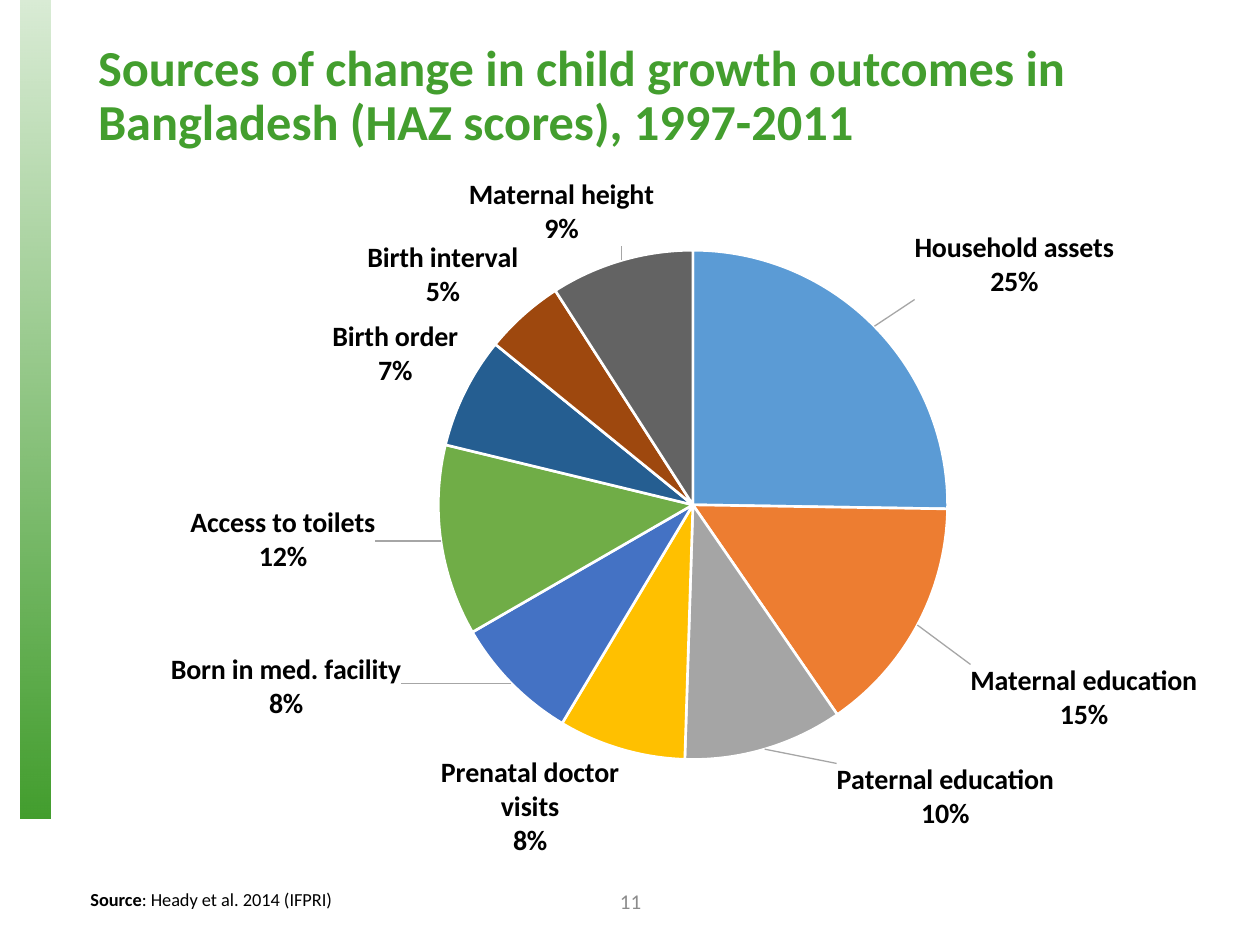
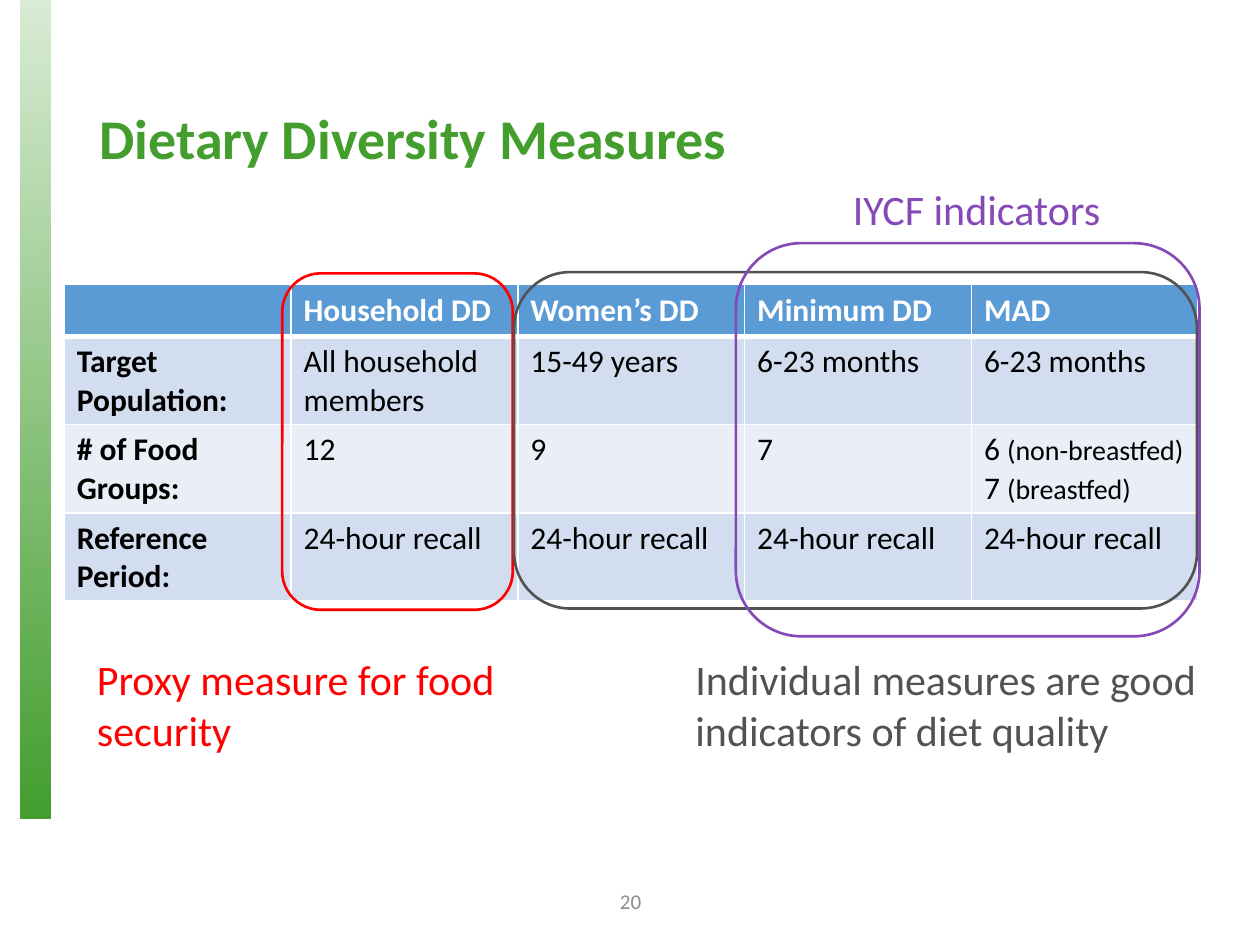
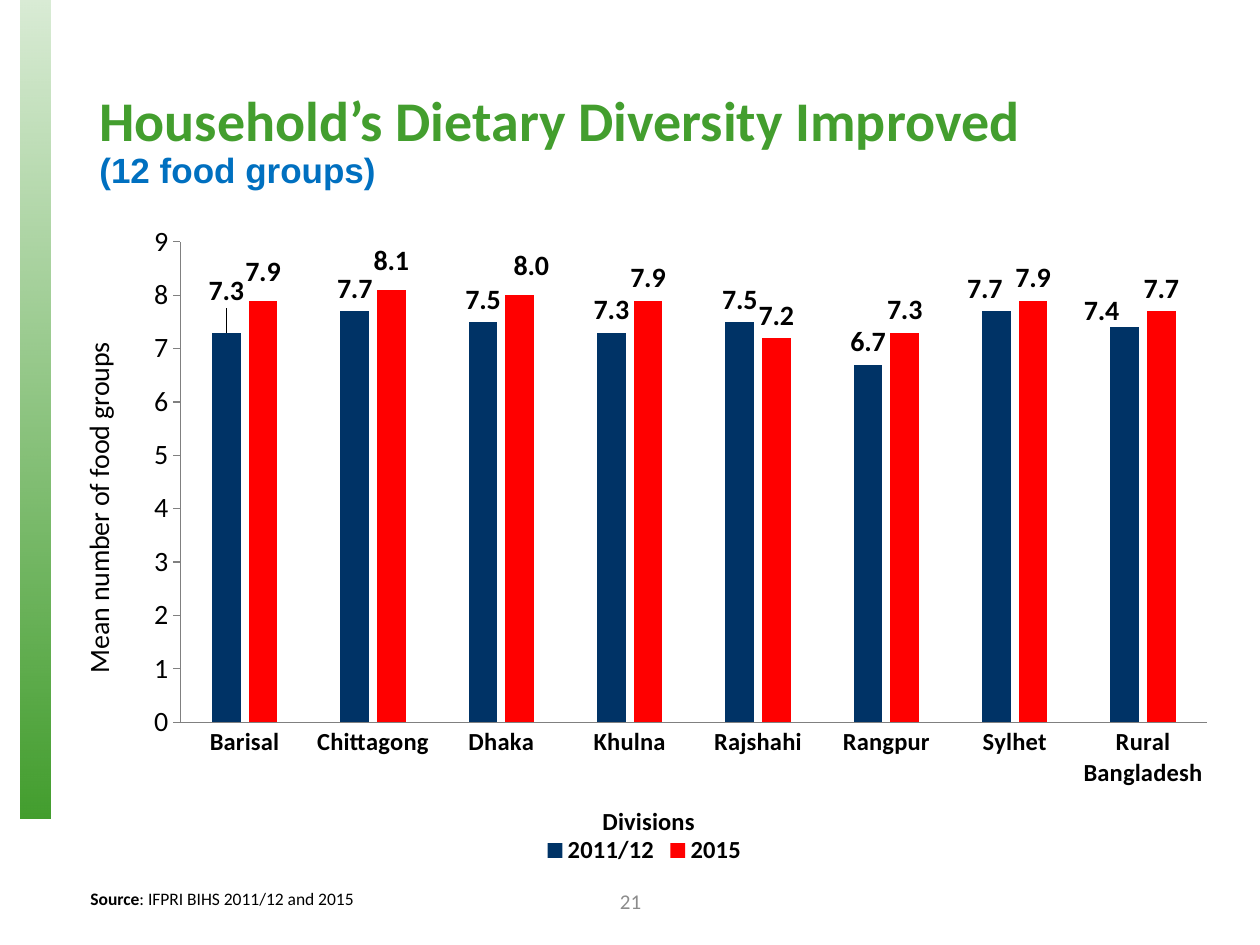
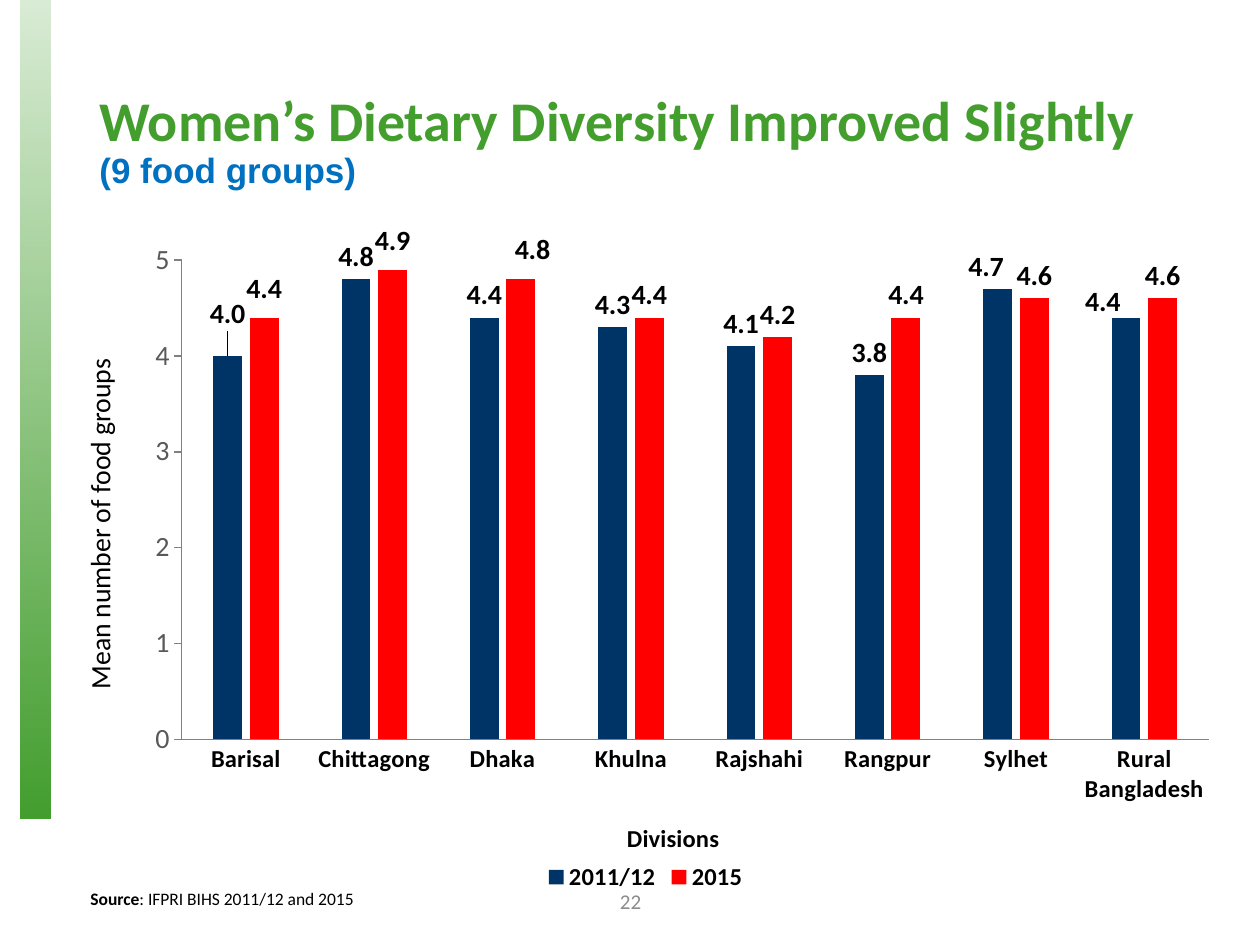
from copy import deepcopy

from lxml import etree
from pptx import Presentation
from pptx import util as u
from pptx.chart.data import CategoryChartData
from pptx.dml.color import RGBColor
from pptx.enum import chart as ch, shapes, text
from pptx.oxml import parse_xml
from pptx.oxml.ns import nsdecls, qn

PX = 9144  # 100 px to the inch

GREEN = RGBColor(0x43, 0x9E, 0x2E)
BLUE = RGBColor(0x00, 0x70, 0xC0)
BLACK = RGBColor(0, 0, 0)
WHITE = RGBColor(0xFF, 0xFF, 0xFF)
RED = RGBColor(0xFF, 0, 0)
NAVY = RGBColor(0x00, 0x33, 0x66)
PURPLE = RGBColor(0x85, 0x49, 0xB7)
CHARCOAL = RGBColor(0x52, 0x52, 0x52)
AXIS_GRAY = RGBColor(0x80, 0x80, 0x80)
TICK_GRAY = RGBColor(0x59, 0x59, 0x59)
NUMBER_GRAY = RGBColor(0x8C, 0x8C, 0x8C)
HEADER_BLUE = RGBColor(0x5B, 0x9B, 0xD5)
BAND_DARK = RGBColor(0xD2, 0xDE, 0xEF)
BAND_LIGHT = RGBColor(0xEA, 0xEF, 0xF7)
SLICES = [RGBColor.from_string(c) for c in (
    "5B9BD5", "ED7D31", "A5A5A5", "FFC000", "4472C4",
    "70AD47", "255E91", "9E480E", "636363")]

FONT = "Calibri"
TITLE_BOX = (69, 40, 862, 145)

GROWTH_SOURCES = {
    "Household assets": 25, "Maternal education": 15, "Paternal education": 10,
    "Prenatal doctor visits": 8, "Born in med. facility": 8,
    "Access to toilets": 12, "Birth order": 7, "Birth interval": 5,
    "Maternal height": 9}
GROWTH_LABEL_SHIFTS = {
    0: (0.03, -0.03), 1: (0.04, 0.05), 2: (0.06, 0.01),
    4: (-0.09, -0.05), 5: (-0.05, -0.05), 8: (0.03, -0.01)}

DIVISIONS = ["Barisal", "Chittagong", "Dhaka", "Khulna", "Rajshahi",
             "Rangpur", "Sylhet", "Rural Bangladesh"]
SURVEYS = [  # year, colour, label shifts
    ("2011/12", NAVY, {0: (0, -0.03), 6: (-0.01, 0), 7: (-0.02, 0.01)}),
    ("2015", RED, {0: (0, -0.01), 1: (0, -0.01), 2: (0.01, -0.01)})]

MEASURES = [
    ["", "Household DD", "Women’s DD", "Minimum DD", "MAD"],
    ["Target Population:", "All household members", "15-49 years",
     "6-23 months", "6-23 months"],
    ["# of Food Groups:", "12", "9", "7",
     [("6 ", "(non-breastfed)"), ("7 ", "(breastfed)")]],
    ["Reference Period:"] + ["24-hour recall"] * 4]


def emu(box):
    return [u.Emu(length * PX) for length in box]


def style_font(font, size, color=BLACK, bold=False, name=FONT):
    font.size, font.bold, font.name = u.Pt(size), bold, name
    font.color.rgb = color


def add_run(paragraph, words, size, color=BLACK, bold=False, name=FONT):
    run = paragraph.add_run()
    run.text = words
    style_font(run.font, size, color, bold, name)


def add_textbox(slide, box, anchor=text.MSO_ANCHOR.TOP):
    """Return the frame and first paragraph of a wrapping text box."""
    frame = slide.shapes.add_textbox(*emu(box)).text_frame
    frame.word_wrap = True
    frame.vertical_anchor = anchor
    return frame, frame.paragraphs[0]


def add_band(slide, box):
    band = slide.shapes.add_shape(shapes.MSO_SHAPE.RECTANGLE, *emu(box))
    band.shadow.inherit = False
    band.line.fill.background()
    band.fill.gradient()
    band.fill.gradient_angle = 270
    for stop in band.fill.gradient_stops:
        stop.color.rgb = GREEN
    top_color = next(band._element.iter(qn("a:srgbClr")))
    etree.SubElement(top_color, qn("a:alpha"), val="20000")


def add_base(prs, number):
    slide = prs.slides.add_slide(prs.slide_layouts[6])
    add_band(slide, (16, 0, 24, 650))
    _, paragraph = add_textbox(slide, (388, 695, 225, 40), text.MSO_ANCHOR.MIDDLE)
    paragraph.alignment = text.PP_ALIGN.CENTER
    add_run(paragraph, str(number), 12, NUMBER_GRAY)
    return slide


def add_title(slide, title, subtitle=None, box=TITLE_BOX, size=32):
    frame, paragraph = add_textbox(slide, box, text.MSO_ANCHOR.MIDDLE)
    paragraph.line_spacing = 0.9
    add_run(paragraph, title, size, GREEN, True)
    if subtitle:
        paragraph.add_line_break()
        add_run(paragraph, subtitle, 20, BLUE, True, "Arial")
    return frame


def add_source(slide, citation, size=10):
    _, paragraph = add_textbox(slide, (62, 700, 727, 28))
    add_run(paragraph, "Source", size, bold=True)
    add_run(paragraph, ": " + citation, size)


def make_layout(x, y, w=None, h=None):
    """Manual chart layout; with a size it fixes the inner plot area."""
    parts = [("x", x), ("y", y)]
    if w:
        parts = [("layoutTarget", "inner"), ("xMode", "edge"),
                 ("yMode", "edge")] + parts + [("w", w), ("h", h)]
    inner = "".join(f'<c:{tag} val="{value}"/>' for tag, value in parts)
    return parse_xml(f'<c:layout {nsdecls("c")}><c:manualLayout>{inner}'
                     '</c:manualLayout></c:layout>')


def set_layout(element, layout):
    current = element.find(qn("c:layout"))
    if current is None:
        element.insert(0, layout)
    else:
        element.replace(current, layout)


def place_axis_title(axis, words, size, bold, x, y):
    title = axis.axis_title
    paragraph = title.text_frame.paragraphs[0]
    add_run(paragraph, words, size, bold=bold)
    layout = make_layout(x, y)
    for mode in ("yMode", "xMode"):
        layout[0].insert(0, parse_xml(f'<c:{mode} {nsdecls("c")} val="edge"/>'))
    set_layout(title._element, layout)
    return title


def shift_labels(labels, shifts):
    """Move single labels by fractions of the chart, keeping the shared style."""
    group = labels._element
    shared = [part for part in group if part.tag not in
              (qn("c:dLbl"), qn("c:showLeaderLines"), qn("c:leaderLines"))]
    for position, (index, shift) in enumerate(shifts.items()):
        label = parse_xml(f'<c:dLbl {nsdecls("c")}><c:idx val="{index}"/></c:dLbl>')
        label.append(make_layout(*shift))
        label.extend(deepcopy(part) for part in shared)
        group.insert(position, label)


def add_chart(slide, kind, box, data):
    chart = slide.shapes.add_chart(kind, *emu(box), data).chart
    style_font(chart.font, 10)
    chart.has_title = False
    chart.has_legend = False
    return chart


def style_labels(series, number_format):
    labels = series.data_labels
    labels.number_format = number_format
    labels.number_format_is_linked = False
    style_font(labels.font, 16, bold=True)
    labels.position = ch.XL_LABEL_POSITION.OUTSIDE_END
    return labels


def add_growth_pie(slide, box):
    data = CategoryChartData()
    data.categories = list(GROWTH_SOURCES)
    data.add_series("Series 1", list(GROWTH_SOURCES.values()))
    chart = add_chart(slide, ch.XL_CHART_TYPE.PIE, box, data)
    chart.plots[0].vary_by_categories = True
    plot_area = chart._chartSpace.find(".//" + qn("c:plotArea"))
    set_layout(plot_area, make_layout(0.295, 0.12, 0.437, 0.71))
    series = chart.plots[0].series[0]
    for index, color in enumerate(SLICES):
        slice_format = series.points[index].format
        slice_format.fill.solid()
        slice_format.fill.fore_color.rgb = color
        slice_format.line.color.rgb = WHITE
        slice_format.line.width = u.Pt(1.5)
    labels = style_labels(series, "0%")
    labels.show_value = False
    labels.show_category_name = labels.show_percentage = True
    separator = parse_xml(f'<c:separator {nsdecls("c")}>\n</c:separator>')
    labels._element.find(qn("c:showBubbleSize")).addnext(separator)
    leader = labels._element.find(qn("c:showLeaderLines"))
    if leader is None:
        leader = etree.SubElement(labels._element, qn("c:showLeaderLines"))
    leader.set("val", "1")
    leader.addnext(parse_xml(
        f'<c:leaderLines {nsdecls("c", "a")}><c:spPr><a:ln w="9525"><a:solidFill>'
        '<a:srgbClr val="A6A6A6"/></a:solidFill></a:ln></c:spPr></c:leaderLines>'))
    shift_labels(labels, GROWTH_LABEL_SHIFTS)


def style_axis(axis, size, color, bold, tick):
    axis.has_major_gridlines = False
    axis.major_tick_mark = tick
    axis.minor_tick_mark = ch.XL_TICK_MARK.NONE
    style_font(axis.tick_labels.font, size, color, bold)
    axis.format.line.color.rgb = AXIS_GRAY
    axis.format.line.width = u.Pt(0.75)


def add_diversity_chart(slide, box, scores, top, tick_color, plot, title_spots):
    """Clustered columns by division; title_spots are the two axis title places."""
    data = CategoryChartData()
    data.categories = DIVISIONS
    for (year, _, _), values in zip(SURVEYS, scores):
        data.add_series(year, values)
    chart = add_chart(slide, ch.XL_CHART_TYPE.COLUMN_CLUSTERED, box, data)
    columns = chart.plots[0]
    columns.vary_by_categories = False
    columns.gap_width, columns.overlap = 219, -27
    set_layout(chart._chartSpace.find(".//" + qn("c:plotArea")), make_layout(*plot))

    for series, (_, color, shifts) in zip(columns.series, SURVEYS):
        series.format.fill.solid()
        series.format.fill.fore_color.rgb = color
        labels = style_labels(series, "0.0")
        labels.show_value = True
        shift_labels(labels, shifts)

    divisions, mean = chart.category_axis, chart.value_axis
    style_axis(divisions, 14, BLACK, True, ch.XL_TICK_MARK.NONE)
    style_axis(mean, 16, tick_color, False, ch.XL_TICK_MARK.OUTSIDE)
    mean.minimum_scale, mean.maximum_scale, mean.major_unit = 0, top, 1
    mean.tick_labels.number_format = "0"
    mean.tick_labels.number_format_is_linked = False
    place_axis_title(divisions, "Divisions", 14, True, *title_spots[0])
    mean_title = place_axis_title(mean, "Mean number of food groups", 16, False,
                                  *title_spots[1])
    mean_title._element.find(".//" + qn("a:bodyPr")).set("rot", "-5400000")

    chart.has_legend = True
    chart.legend.position = ch.XL_LEGEND_POSITION.BOTTOM
    chart.legend.include_in_layout = False
    style_font(chart.legend.font, 14, bold=True)


def set_borders(cell, bottom_width):
    properties = cell._tc.get_or_add_tcPr()
    for side, width in (("L", 1), ("R", 1), ("T", 1), ("B", bottom_width)):
        properties.append(parse_xml(
            f'<a:ln{side} {nsdecls("a")} w="{u.Pt(width)}"><a:solidFill>'
            f'<a:srgbClr val="{WHITE}"/></a:solidFill></a:ln{side}>'))


def fill_cell(cell, content, row, column):
    header = row == 0
    set_borders(cell, 3 if header else 1)
    cell.fill.solid()
    cell.fill.fore_color.rgb = (
        HEADER_BLUE if header else BAND_DARK if row % 2 else BAND_LIGHT)
    paragraph = cell.text_frame.paragraphs[0]
    if isinstance(content, str):
        if content:
            add_run(paragraph, content, 18, WHITE if header else BLACK,
                    header or column == 0)
        return
    for index, (count, group) in enumerate(content):
        if index:
            paragraph = cell.text_frame.add_paragraph()
        add_run(paragraph, count, 18)
        add_run(paragraph, group, 16)


def add_measures_table(slide, box):
    table = slide.shapes.add_table(len(MEASURES), len(MEASURES[0]), *emu(box)).table
    for row, height in zip(table.rows, (41, 70, 70, 70)):
        row.height = u.Emu(height * PX)
    for r, contents in enumerate(MEASURES):
        for c, content in enumerate(contents):
            fill_cell(table.cell(r, c), content, r, c)


def add_callout(slide, outline_box, words_box, words, color):
    """Rounded outline around table columns, with its remark."""
    outline = slide.shapes.add_shape(shapes.MSO_SHAPE.ROUNDED_RECTANGLE,
                                     *emu(outline_box))
    outline.shadow.inherit = False
    outline.fill.background()
    outline.line.color.rgb = color
    outline.line.width = u.Pt(1.5)
    _, paragraph = add_textbox(slide, words_box)
    add_run(paragraph, words, 24, color)


def build_growth_slide(prs):
    slide = add_base(prs, 11)
    frame = add_title(slide, "Sources of change in child growth outcomes in "
                      "Bangladesh (HAZ scores), 1997-2011",
                      box=(68, 34, 900, 121), size=28.8)
    frame.vertical_anchor = text.MSO_ANCHOR.TOP
    frame.margin_top = 0
    add_growth_pie(slide, (75, 130, 925, 570))
    add_source(slide, "Heady et al. 2014 (IFPRI)", 10.5)


def build_measures_slide(prs):
    slide = add_base(prs, 20)
    add_title(slide, "Dietary Diversity Measures")
    add_measures_table(slide, (51, 226, 900, 251))
    add_callout(slide, (224, 217, 183, 267), (67, 514, 358, 91),
                "Proxy measure for food security", RED)
    add_callout(slide, (408, 216, 542, 267), (542, 514, 458, 91),
                "Individual measures are good indicators of diet quality", CHARCOAL)
    add_callout(slide, (584, 193, 368, 312), (667, 141, 333, 50),
                "IYCF indicators", PURPLE)


def build_diversity_slide(prs, number, title, subtitle, **chart):
    slide = add_base(prs, number)
    add_title(slide, title, subtitle)
    add_diversity_chart(slide, **chart)
    add_source(slide, "IFPRI BIHS 2011/12 and 2015")


def main():
    prs = Presentation()
    prs.slide_width, prs.slide_height = emu((1000, 750))
    build_growth_slide(prs)
    build_measures_slide(prs)
    build_diversity_slide(
        prs, 21, "Household’s Dietary Diversity Improved", "(12 food groups)",
        box=(50, 175, 923, 516), top=9, tick_color=BLACK,
        scores=[(7.3, 7.7, 7.5, 7.3, 7.5, 6.7, 7.7, 7.4),
                (7.9, 8.1, 8.0, 7.9, 7.2, 7.3, 7.9, 7.7)],
        plot=(0.101, 0.033, 0.883, 0.739),
        title_spots=[(0.46, 0.89), (0.01, 0.18)])
    build_diversity_slide(
        prs, 22, "Women’s Dietary Diversity Improved Slightly", "(9 food groups)",
        box=(51, 178, 923, 534), top=5, tick_color=TICK_GRAY,
        scores=[(4.0, 4.8, 4.4, 4.3, 4.1, 3.8, 4.7, 4.4),
                (4.4, 4.9, 4.8, 4.4, 4.2, 4.4, 4.6, 4.6)],
        plot=(0.101, 0.046, 0.883, 0.718),
        title_spots=[(0.48, 0.88), (0.01, 0.19)])
    prs.save("out.pptx")


if __name__ == "__main__":
    main()
